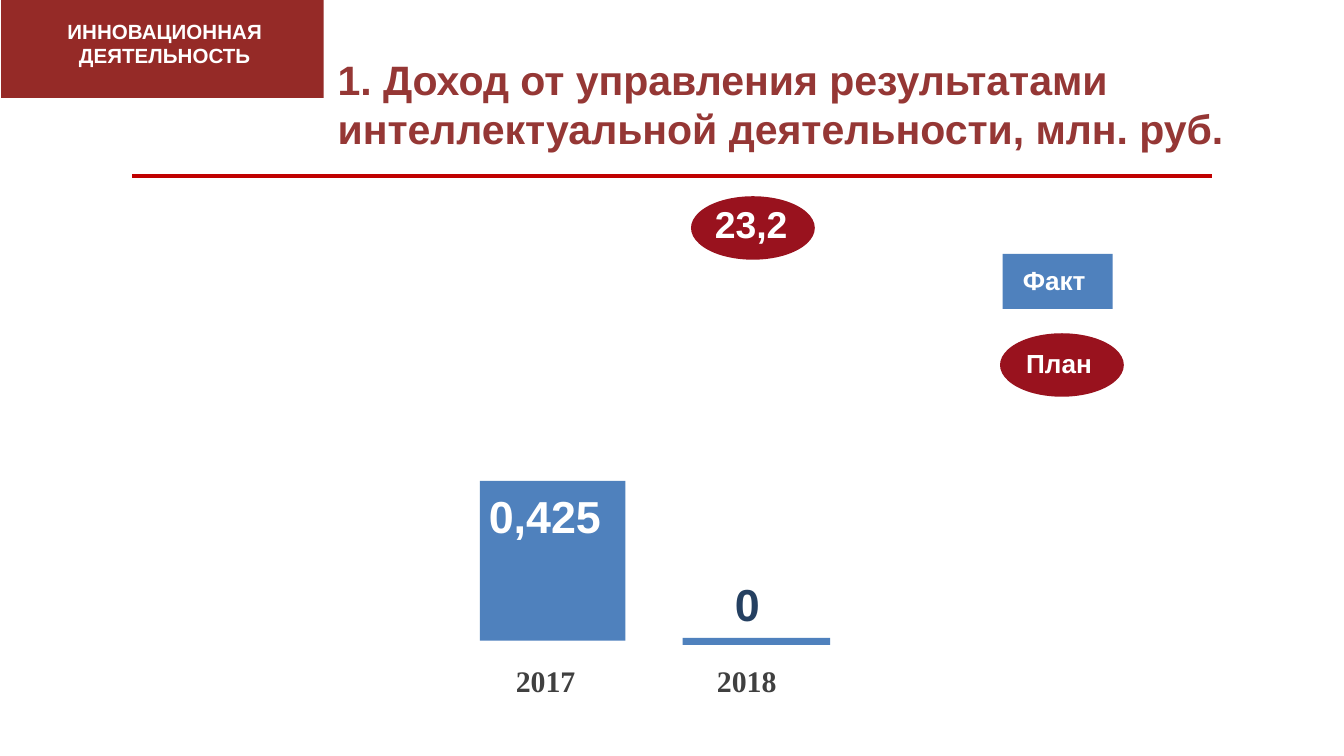
import pptx
import pptx.util
import pptx.dml.color
import pptx.enum.shapes
import pptx.enum.text
import pptx.oxml.ns
import lxml.etree

Cm = pptx.util.Cm
Pt = pptx.util.Pt
RGBColor = pptx.dml.color.RGBColor
SHAPE = pptx.enum.shapes.MSO_SHAPE
ALIGN = pptx.enum.text.PP_ALIGN

WHITE = RGBColor(0xFF, 0xFF, 0xFF)
TITLE_RED = RGBColor(0x95, 0x37, 0x35)
HEADER_RED = RGBColor(0x95, 0x2A, 0x27)
RULE_RED = RGBColor(0xC0, 0x00, 0x00)
PLAN_RED = RGBColor(0x99, 0x12, 0x1E)
FACT_BLUE = RGBColor(0x4F, 0x81, 0xBD)
DARK_BLUE = RGBColor(0x25, 0x40, 0x61)
GREY = RGBColor(0x40, 0x40, 0x40)

deck = pptx.Presentation()
deck.slide_width = Cm(25.4)
deck.slide_height = Cm(14.29)
page = deck.slides.add_slide(deck.slide_layouts[5])


def add_block(kind, left, top, width, height, color):
    block = page.shapes.add_shape(kind, Cm(left), Cm(top), Cm(width), Cm(height))
    block.shadow.inherit = False
    block.fill.solid()
    block.fill.fore_color.rgb = color
    block.line.fill.background()


def add_label(text, left, top, width, height, size, color, align=ALIGN.LEFT, font="Arial"):
    box = page.shapes.add_textbox(Cm(left), Cm(top), Cm(width), Cm(height))
    box.text_frame.word_wrap = True
    para = box.text_frame.paragraphs[0]
    para.text = text
    para.alignment = align
    para.font.name = font
    para.font.size = Pt(size)
    para.font.bold = True
    para.font.color.rgb = color


# Title
title = page.shapes.title
title.left, title.top, title.width, title.height = Cm(6.38), Cm(0.97), Cm(17.5), Cm(1.98)
frame = title.text_frame
frame.margin_left = frame.margin_top = frame.margin_right = frame.margin_bottom = 0
frame.word_wrap = True
frame.auto_size = pptx.enum.text.MSO_AUTO_SIZE.NONE
frame.vertical_anchor = pptx.enum.text.MSO_ANCHOR.MIDDLE
para = frame.paragraphs[0]
para.text = "1. Доход от управления результатами интеллектуальной деятельности, млн. руб."
para.alignment = ALIGN.LEFT
para.font.name = "Arial"
para.font.size = Pt(22)
para.font.bold = True
para.font.color.rgb = TITLE_RED

# Rule under the title
rule = page.shapes.add_connector(
    pptx.enum.shapes.MSO_CONNECTOR.STRAIGHT, Cm(2.5), Cm(3.33), Cm(22.9), Cm(3.33))
rule.line.color.rgb = RULE_RED
rule.line.width = Pt(2.25)
lxml.etree.SubElement(rule.element.spPr, pptx.oxml.ns.qn("a:effectLst"))

# Section tag in the corner
add_block(SHAPE.RECTANGLE, 0.02, 0, 6.1, 1.85, HEADER_RED)
add_label("ИННОВАЦИОННАЯ ДЕЯТЕЛЬНОСТЬ", 0.13, 0.23, 5.97, 1.19, 11, WHITE, ALIGN.CENTER)

# Bars of actual income, with values
add_block(SHAPE.RECTANGLE, 9.07, 9.09, 2.75, 3.02, FACT_BLUE)
add_label("0,425", 8.99, 9.12, 3.25, 1.27, 24, WHITE)
add_block(SHAPE.RECTANGLE, 12.9, 12.06, 2.79, 0.13, FACT_BLUE)
add_label("0", 13.64, 10.77, 1.45, 1.27, 24, DARK_BLUE)

# Years under the bars
for year, left in (("2017", 9.5), ("2018", 13.3)):
    add_label(year, left, 12.4, 2.2, 0.94, 16, GREY, font="Times New Roman")

# Planned value for 2018
add_block(SHAPE.OVAL, 13.06, 3.71, 2.34, 1.2, PLAN_RED)
add_label("23,2", 13.26, 3.68, 2.13, 1.12, 20, WHITE)

# Legend
add_block(SHAPE.RECTANGLE, 18.95, 4.8, 2.08, 1.04, FACT_BLUE)
add_label("Факт", 19.08, 4.88, 1.85, 0.86, 14, WHITE)
add_block(SHAPE.OVAL, 18.9, 6.3, 2.34, 1.2, PLAN_RED)
add_label("План", 18.77, 6.45, 2.49, 0.86, 14, WHITE, ALIGN.CENTER)

deck.save("out.pptx")
